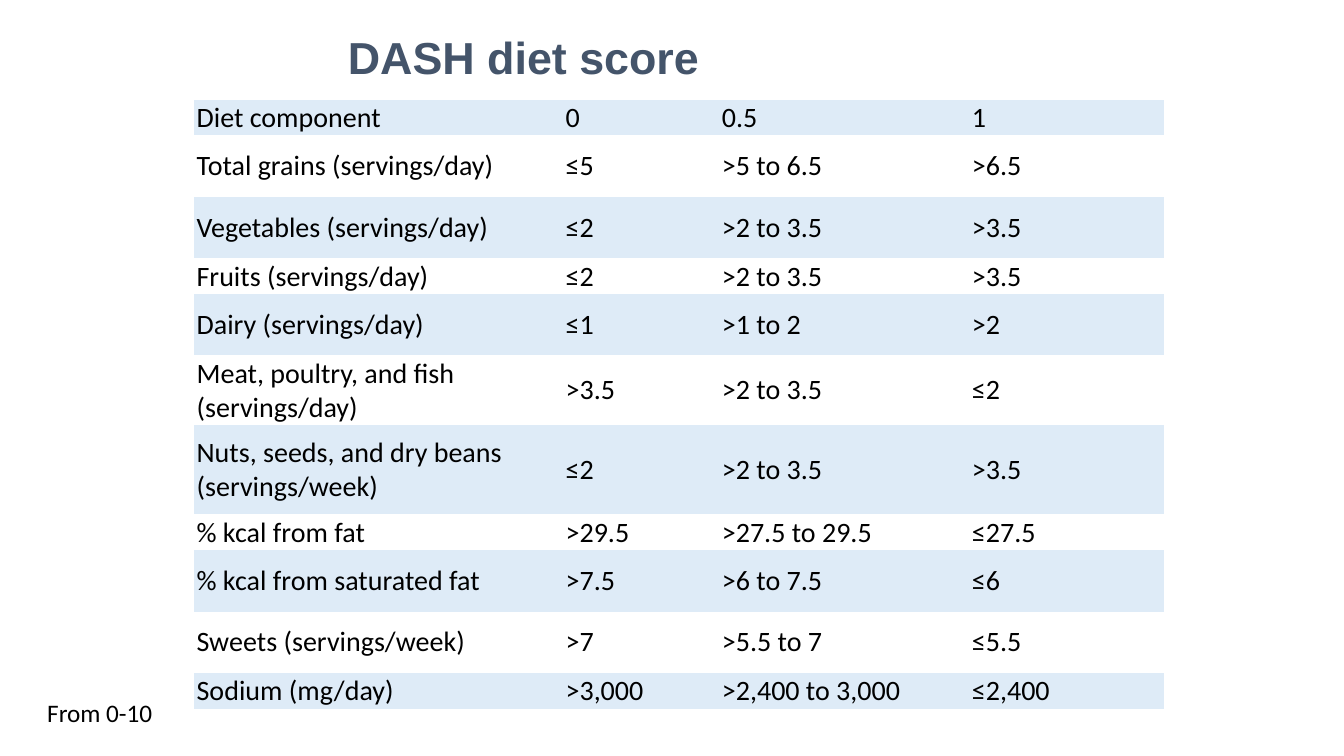
import dataclasses

import pptx
import pptx.dml.color
import pptx.enum.text
import pptx.oxml.ns
import pptx.slide
import pptx.table
import pptx.text.text
import pptx.util
from pptx.util import Inches

COLORS = {"title": "44546A", "text": "000000", "band": "DEEBF7", "plain": "FFFFFF"}
NO_STYLE_NO_GRID = "{2D5ABB26-0587-4C30-8999-92F81FD0307C}"
COLUMN_WIDTHS = (3.66, 1.55, 2.48, 1.94)
SHORT, TALL = 0.32, 0.61


@dataclasses.dataclass(frozen=True)
class ScoreRow:
    component: str
    zero: str
    half: str
    one: str
    height: float

    def texts(self) -> tuple[str, str, str, str]:
        return self.component, self.zero, self.half, self.one


SCORE_ROWS = (
    ScoreRow("Diet component", "0", "0.5", "1", SHORT),
    ScoreRow("Total grains (servings/day)", "≤5", ">5 to 6.5", ">6.5", TALL),
    ScoreRow("Vegetables (servings/day)", "≤2", ">2 to 3.5", ">3.5", TALL),
    ScoreRow("Fruits (servings/day)", "≤2", ">2 to 3.5", ">3.5", SHORT),
    ScoreRow("Dairy (servings/day)", "≤1", ">1 to 2", ">2", TALL),
    ScoreRow("Meat, poultry, and fish (servings/day)", ">3.5", ">2 to 3.5", "≤2", 0.62),
    ScoreRow("Nuts, seeds, and dry beans (servings/week)", "≤2", ">2 to 3.5", ">3.5", 0.89),
    ScoreRow("% kcal from fat", ">29.5", ">27.5 to 29.5", "≤27.5", SHORT),
    ScoreRow("% kcal from saturated fat", ">7.5", ">6 to 7.5", "≤6", TALL),
    ScoreRow("Sweets (servings/week)", ">7", ">5.5 to 7", "≤5.5", TALL),
    ScoreRow("Sodium (mg/day)", ">3,000", ">2,400 to 3,000", "≤2,400", SHORT),
)


def write_text(
    frame: pptx.text.text.TextFrame,
    text: str,
    size: int,
    font_name: str = "Calibri",
    color: str = "text",
    bold: bool = False,
) -> None:
    frame.text = text
    paragraph = frame.paragraphs[0]
    paragraph.alignment = pptx.enum.text.PP_ALIGN.LEFT
    font = paragraph.font
    font.name, font.size, font.bold = font_name, pptx.util.Pt(size), bold
    font.color.rgb = pptx.dml.color.RGBColor.from_string(COLORS[color])


def add_title(slide: pptx.slide.Slide) -> None:
    title = slide.shapes.title
    title.left, title.top = Inches(3.35), Inches(0.24)
    title.width, title.height = Inches(5), Inches(0.64)
    frame = title.text_frame
    frame.vertical_anchor = pptx.enum.text.MSO_ANCHOR.TOP
    frame.auto_size = pptx.enum.text.MSO_AUTO_SIZE.SHAPE_TO_FIT_TEXT
    write_text(frame, "DASH diet score", 32, "Arial", "title", bold=True)


def format_cell(cell: pptx.table._Cell, text: str, fill: str) -> None:
    cell.margin_left = cell.margin_right = Inches(0.03)
    cell.margin_top = cell.margin_bottom = Inches(0.01)
    cell.vertical_anchor = pptx.enum.text.MSO_ANCHOR.MIDDLE
    cell.fill.solid()
    cell.fill.fore_color.rgb = pptx.dml.color.RGBColor.from_string(COLORS[fill])
    write_text(cell.text_frame, text, 20)


def add_score_table(slide: pptx.slide.Slide) -> None:
    graphic_frame = slide.shapes.add_table(
        len(SCORE_ROWS), len(COLUMN_WIDTHS), Inches(1.92), Inches(0.99),
        Inches(sum(COLUMN_WIDTHS)), Inches(sum(row.height for row in SCORE_ROWS)),
    )
    for style in graphic_frame.element.iter(pptx.oxml.ns.qn("a:tableStyleId")):
        style.text = NO_STYLE_NO_GRID
    table = graphic_frame.table
    table.first_row = table.horz_banding = False
    for column, width in zip(table.columns, COLUMN_WIDTHS):
        column.width = Inches(width)
    for index, score_row in enumerate(SCORE_ROWS):
        table_row = table.rows[index]
        table_row.height = Inches(score_row.height)
        fill = "plain" if index % 2 else "band"
        for cell, text in zip(table_row.cells, score_row.texts()):
            format_cell(cell, text, fill)


def add_range_note(slide: pptx.slide.Slide) -> None:
    note = slide.shapes.add_textbox(Inches(0.37), Inches(6.87), Inches(1.25), Inches(0.4))
    note.text_frame.word_wrap = False
    note.text_frame.auto_size = pptx.enum.text.MSO_AUTO_SIZE.SHAPE_TO_FIT_TEXT
    write_text(note.text_frame, "From 0-10", 18)


def main() -> None:
    presentation = pptx.Presentation()
    presentation.slide_width, presentation.slide_height = Inches(13.33), Inches(7.5)
    slide = presentation.slides.add_slide(presentation.slide_layouts.get_by_name("Title Only"))
    add_title(slide)
    add_score_table(slide)
    add_range_note(slide)
    presentation.save("out.pptx")


if __name__ == "__main__":
    main()
